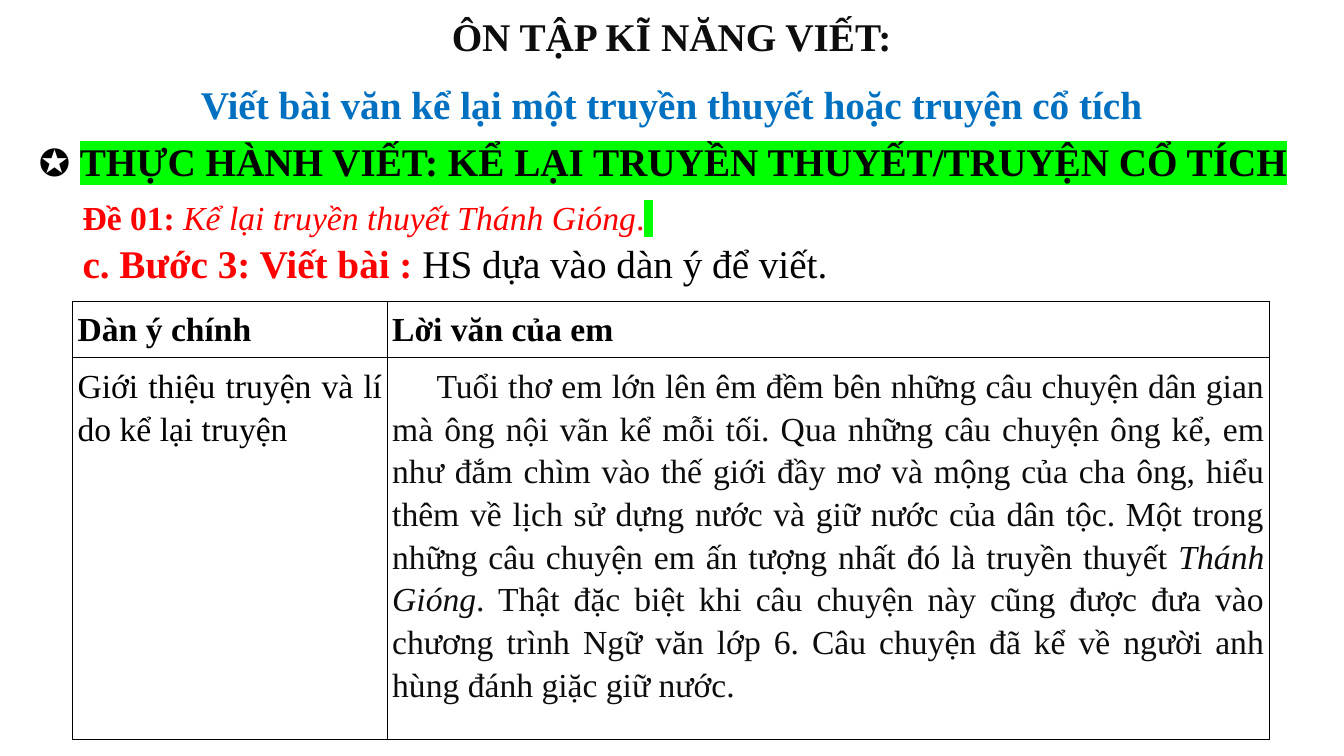
from lxml import etree
from pptx import Presentation
from pptx.dml.color import RGBColor
from pptx.enum.text import MSO_AUTO_SIZE, PP_ALIGN
from pptx.oxml.ns import qn
from pptx.util import Emu, Pt

PX = 9144  # 100 px to the inch
CENTER, JUSTIFY = PP_ALIGN.CENTER, PP_ALIGN.JUSTIFY
FIT = MSO_AUTO_SIZE.SHAPE_TO_FIT_TEXT
BLACK, INK, BLUE, RED, GREEN = "000000", "0D0D0D", "0070C0", "FF0000", "00FF00"


def px(n):
    return Emu(n * PX)


def rgb(value):
    return RGBColor.from_string(value)


def solid(parent, tag, value):
    el = etree.SubElement(parent, qn(tag))
    etree.SubElement(el, qn("a:srgbClr")).set("val", value)
    return el


class Deck:
    font = "Times New Roman"
    spacing = 1.15

    def __init__(self, width, height):
        self.prs = Presentation()
        self.prs.slide_width, self.prs.slide_height = px(width), px(height)
        self.s = self.prs.slides.add_slide(self.prs.slide_layouts[6])

    def run(self, p, text, size, color, bold=False, italic=False, mark=None):
        r = p.add_run()
        r.text = text
        f = r.font
        f.name, f.size, f.bold, f.italic = self.font, Pt(size), bold, italic
        f.color.rgb = rgb(color)
        if mark:
            rPr = r._r.get_or_add_rPr()
            rPr.find(qn("a:solidFill")).addnext(solid(rPr, "a:highlight", mark))

    def paragraph(self, p, runs, align=JUSTIFY, after=0):
        p.alignment, p.line_spacing = align, self.spacing
        p.space_before, p.space_after = Pt(0), Pt(after)
        for args in runs:
            self.run(p, *args)

    def text(self, x, y, w, h, paragraphs, align=JUSTIFY, after=0):
        tf = self.s.shapes.add_textbox(px(x), px(y), px(w), px(h)).text_frame
        tf.word_wrap, tf.auto_size = True, FIT
        for i, runs in enumerate(paragraphs):
            p = tf.add_paragraph() if i else tf.paragraphs[0]
            self.paragraph(p, runs, align, after)

    def border(self, cell):
        tcPr = cell._tc.get_or_add_tcPr()
        for i, side in enumerate(("a:lnL", "a:lnR", "a:lnT", "a:lnB")):
            ln = etree.Element(qn(side), w=str(Pt(1)))
            solid(ln, "a:solidFill", BLACK)
            tcPr.insert(i, ln)

    def table(self, x, y, widths, heights, rows):
        t = self.s.shapes.add_table(len(heights), len(widths), px(x), px(y),
                                    px(sum(widths)), px(sum(heights))).table
        t.first_row = t.horz_banding = False
        for col, w in zip(t.columns, widths):
            col.width = px(w)
        for row, h, contents in zip(t.rows, heights, rows):
            row.height = px(h)
            for cell, runs in zip(row.cells, contents):
                cell.fill.background()
                self.border(cell)
                cell.margin_left = cell.margin_right = px(5)
                cell.margin_top = cell.margin_bottom = px(5)
                self.paragraph(cell.text_frame.paragraphs[0], runs)
        return t


def main():
    d = Deck(1333, 750)

    # Lesson title
    d.text(72, 0, 1188, 133, [
        [("ÔN TẬP KĨ NĂNG VIẾT:", 28, INK, True)],
        [("Viết bài văn kể lại một truyền thuyết hoặc truyện cổ tích", 28, BLUE, True)],
    ], CENTER, 10)

    # Section, topic and step
    d.text(29, 124, 1275, 61, [[
        ("✪ ", 28, BLACK),
        ("THỰC HÀNH VIẾT: KỂ LẠI TRUYỀN THUYẾT/TRUYỆN CỔ TÍCH", 28, BLACK, True, False, GREEN),
    ]])
    d.text(72, 184, 1188, 54, [[
        ("Đề 01: ", 24, RED, True),
        ("Kể lại truyền thuyết Thánh Gióng", 24, RED, False, True),
        (".", 24, RED),
        (" ", 24, RED, True, False, GREEN),
    ]])
    d.text(72, 226, 1188, 60, [[
        ("c. Bước 3: Viết bài : ", 28, RED, True),
        ("HS dựa vào dàn ý để viết.", 28, BLACK),
    ]])

    # Outline beside the sample paragraph
    opening = (
        "Tuổi thơ em lớn lên êm đềm bên những câu chuyện dân gian mà ông nội vãn kể mỗi tối. "
        "Qua những câu chuyện ông kể, em như đắm chìm vào thế giới đầy mơ và mộng của cha ông, "
        "hiểu thêm về lịch sử dựng nước và giữ nước của dân tộc. "
        "Một trong những câu chuyện em ấn tượng nhất đó là truyền thuyết ")
    closing = (
        ". Thật đặc biệt khi câu chuyện này cũng được đưa vào chương trình Ngữ văn lớp 6. "
        "Câu chuyện đã kể về người anh hùng đánh giặc giữ nước.")
    t = d.table(72, 299, [312, 875], [56, 379], [
        [[("Dàn ý chính", 24, BLACK, True)],
         [("Lời văn của em", 24, BLACK, True)]],
        [[("Giới thiệu truyện và lí do kể lại truyện", 24, BLACK)],
         [(opening, 24, INK),
          ("Thánh Gióng", 24, INK, False, True),
          (closing, 24, INK)]],
    ])
    p = t.cell(1, 1).text_frame.paragraphs[0]
    p.space_before = Pt(7.5)
    pPr = p._p.get_or_add_pPr()
    pPr.set("marL", "0")
    pPr.set("indent", str(px(44)))

    d.prs.save("out.pptx")


if __name__ == "__main__":
    main()
